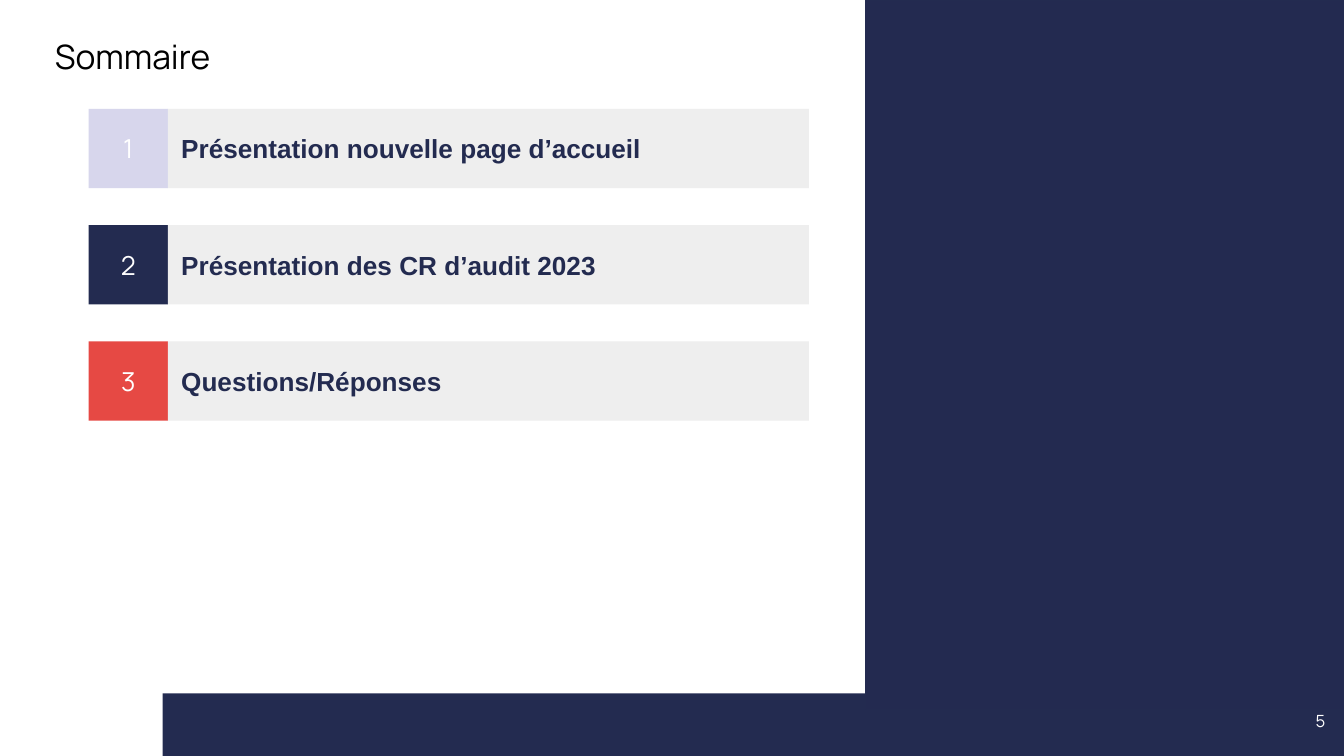
from pptx import Presentation
from pptx.dml.color import RGBColor
from pptx.enum.shapes import MSO_SHAPE
from pptx.enum.text import MSO_ANCHOR, PP_ALIGN
from pptx.util import Inches, Pt

NAVY = RGBColor(0x23, 0x2B, 0x50)
PANEL = RGBColor(0x23, 0x2A, 0x50)
LILAC = RGBColor(0xD7, 0xD6, 0xEC)
RED = RGBColor(0xE6, 0x49, 0x44)
GREY = RGBColor(0xEE, 0xEE, 0xEE)
WHITE = RGBColor(0xFF, 0xFF, 0xFF)
BLACK = RGBColor(0x00, 0x00, 0x00)

prs = Presentation()
prs.slide_width = Inches(10)
prs.slide_height = Inches(10 * 9 / 16)
s = prs.slides.add_slide(prs.slide_layouts[6])


def add_rect(left, top, width, height, fill):
    sp = s.shapes.add_shape(MSO_SHAPE.RECTANGLE, Inches(left), Inches(top),
                            Inches(width), Inches(height))
    sp.shadow.inherit = False
    sp.fill.solid()
    sp.fill.fore_color.rgb = fill
    sp.line.fill.background()
    return sp


def add_text(sp, text, size, font, color, align=PP_ALIGN.LEFT,
             anchor=MSO_ANCHOR.MIDDLE, bold=False):
    tf = sp.text_frame
    tf.word_wrap = True
    tf.vertical_anchor = anchor
    tf.margin_left = tf.margin_right = Inches(0.1)
    tf.margin_top = tf.margin_bottom = Inches(0.1)
    p = tf.paragraphs[0]
    p.alignment = align
    r = p.add_run()
    r.text = text
    r.font.size = Pt(size)
    r.font.name = font
    r.font.bold = bold
    r.font.color.rgb = color


add_rect(1.21, 5.16, 8.79, 0.49, NAVY)
panel = add_rect(6.44, 0, 3.56, 5.28, PANEL)
panel.line.color.rgb = NAVY
panel.line.width = Pt(0.75)

title = s.shapes.add_textbox(Inches(0.31), Inches(0.06), Inches(9.36), Inches(0.71))
add_text(title, "Sommaire", 18, "Manrope", BLACK)

items = [
    ("Présentation nouvelle page d’accueil", LILAC),
    ("Présentation des CR d’audit 2023", NAVY),
    ("Questions/Réponses", RED),
]
first_top, last_top = 0.81, 2.54
pitch = (last_top - first_top) / (len(items) - 1)
for i, (label, color) in enumerate(items):
    top = first_top + i * pitch
    number = add_rect(0.66, top, 0.59, 0.59, color)
    add_text(number, str(i + 1), 14, "Manrope", WHITE, PP_ALIGN.CENTER)
    bar = add_rect(1.25, top, 4.77, 0.59, GREY)
    add_text(bar, label, 14, "Arial", NAVY, bold=True)

page = s.shapes.add_textbox(Inches(9.36), Inches(5.21), Inches(0.6), Inches(0.35))
add_text(page, "5", 9, "Manrope", WHITE, PP_ALIGN.RIGHT, MSO_ANCHOR.TOP)

prs.save("out.pptx")
